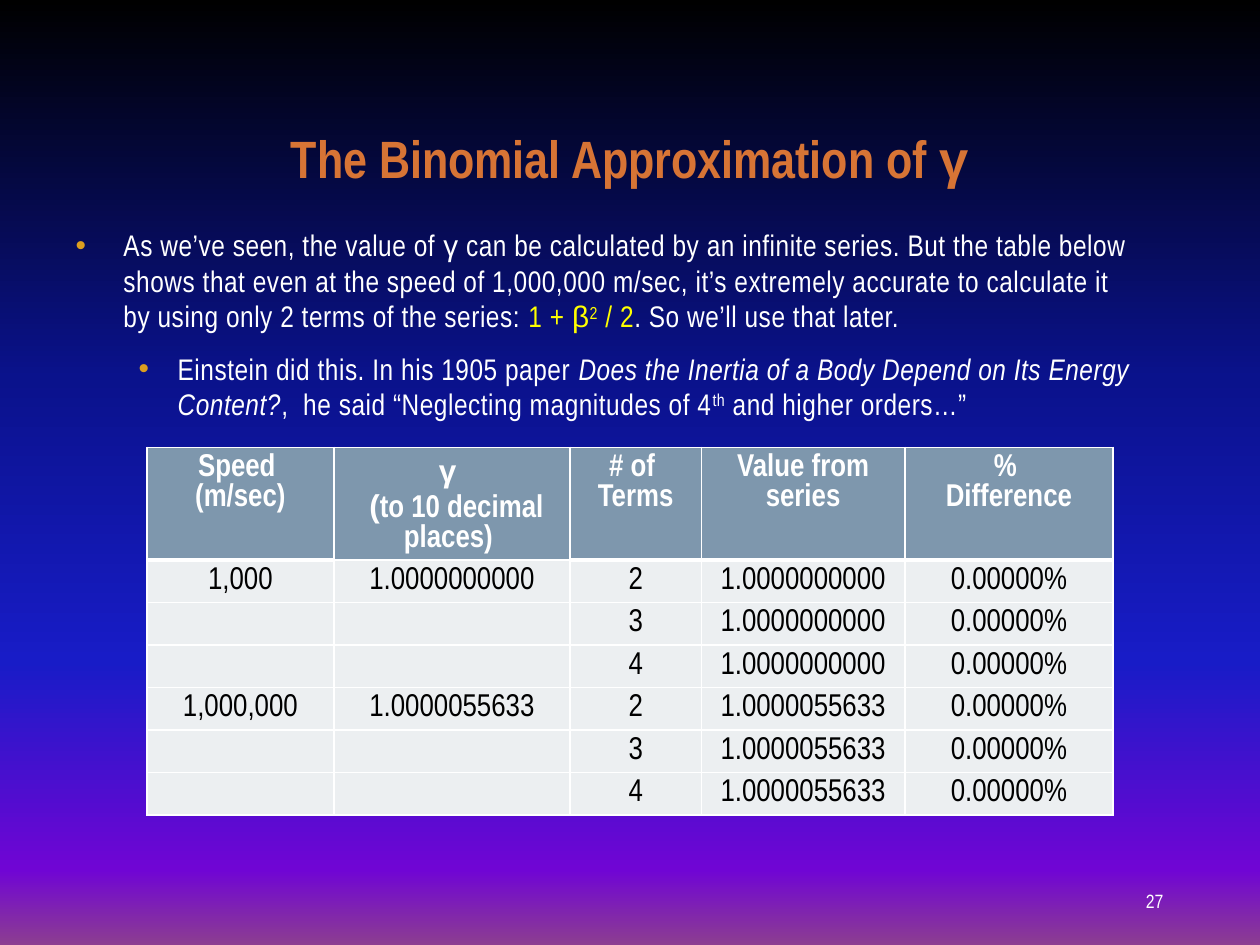
from lxml import etree
from pptx import Presentation
from pptx.dml.color import RGBColor
from pptx.enum.text import MSO_ANCHOR, MSO_AUTO_SIZE, PP_ALIGN
from pptx.oxml.ns import qn
from pptx.util import Inches, Pt

LEFT, CENTER, RIGHT = PP_ALIGN.LEFT, PP_ALIGN.CENTER, PP_ALIGN.RIGHT
TOP, MIDDLE, BOTTOM = MSO_ANCHOR.TOP, MSO_ANCHOR.MIDDLE, MSO_ANCHOR.BOTTOM
NO_FIT = MSO_AUTO_SIZE.NONE

COLORS = {
    "title": "D77435", "text": "FFFFFF", "formula": "FFFF00",
    "bullet": "DC9E1F", "header": "7E97AD", "row": "ECEFF1",
    "cell_text": "000000", "border": "FFFFFF",
}
BACKGROUND = [(0, "000000"), (40, "0A128C"), (70, "181CC7"),
              (92, "7005D4"), (100, "8C3D91")]
NARROW, GREEK = "Arial Narrow", "Arial"

# The slide is a grid of 120 columns by 90 rows
UNIT = Inches(10) // 120
TITLE_BOX = (8, 3.6, 104, 15)
BODY_BOX = (6, 21, 104, 59.4)
TABLE_BOX = (14, 42.6, 92, 35)
NUMBER_BOX = (99, 83.4, 13, 4.8)
COLUMNS = [17.8, 22.5, 12.5, 19.4, 19.8]
HEADER_HEIGHT, ROW_HEIGHT = 10.7, 4.05

TITLE_FORMAT = {"size": Pt(30), "name": NARROW, "bold": True}
BODY_FORMAT = {"size": Pt(17), "name": NARROW, "bold": False}
HEADER_FORMAT = {"size": Pt(18), "name": NARROW, "bold": True}
CELL_FORMAT = {"size": Pt(18), "name": NARROW, "bold": False}
NUMBER_FORMAT = {"size": Pt(11), "name": NARROW}
SYMBOL = {"name": GREEK}

BULLETS = [
    {"indent": (0.38, -0.38), "before": 0, "runs": [
        ("As we’ve seen, the value of ", {}), ("γ", SYMBOL),
        (" can be calculated by an infinite series. But the table below shows "
         "that even at the speed of 1,000,000 m/sec, it’s extremely accurate to "
         "calculate it by using only 2 terms of the series: ", {}),
        ("1 + ", {"color": "formula"}),
        ("β", {"name": GREEK, "color": "formula"}),
        ("2", {"raised": True, "color": "formula"}),
        (" / 2", {"color": "formula"}),
        (". So we’ll use that later.", {})]},
    {"indent": (0.81, -0.31), "before": 3.4, "runs": [
        ("Einstein did this. In his 1905 paper ", {}),
        ("Does the Inertia of a Body Depend on Its Energy Content?",
         {"italic": True}),
        (",  he said “Neglecting magnitudes of 4", {}),
        ("th", {"raised": True}),
        (" and higher orders…”", {})]},
]

# Each header is a list of paragraphs, each paragraph a list of runs
HEADERS = [
    [[("Speed ", {})], [("(m/sec)", {})]],
    [[("γ ", SYMBOL)], [(" (", SYMBOL), ("to 10 decimal places) ", {})]],
    [[("# of ", {})], [("Terms", {})]],
    [[("Value from series", {})]],
    [[("% ", {})], [("Difference", {})]],
]
SPEEDS = [("1,000", "1.0000000000"), ("1,000,000", "1.0000055633")]
TERMS = ["2", "3", "4"]


def place(shape, box):
    for side, cells in zip(("left", "top", "width", "height"), box):
        setattr(shape, side, round(cells * UNIT))


def set_frame(frame, anchor):
    for key, value in {"word_wrap": True, "auto_size": NO_FIT,
                       "vertical_anchor": anchor}.items():
        setattr(frame, key, value)


def add_runs(paragraph, runs, base, color, spacing=None):
    for text, changes in runs:
        run = paragraph.add_run()
        run.text = text
        formats = {**base, **changes}
        run_color = formats.pop("color", color)
        raised = formats.pop("raised", False)
        for key, value in formats.items():
            setattr(run.font, key, value)
        run.font.color.rgb = RGBColor.from_string(COLORS[run_color])
        properties = run.font._element
        if raised:
            properties.set("baseline", "30000")
        if spacing:
            properties.set("spc", str(round(spacing * 100)))


def paint_background(slide):
    fill = slide.background.fill
    fill.gradient()
    fill.gradient_angle = 270
    stops = slide.element.find(".//" + qn("a:gsLst"))
    for stop in list(stops):
        stops.remove(stop)
    for position, color in BACKGROUND:
        stop = etree.SubElement(stops, qn("a:gs"), pos=str(position * 1000))
        etree.SubElement(stop, qn("a:srgbClr"), val=color)


def add_title(slide, box):
    title = slide.shapes.title
    place(title, box)
    set_frame(title.text_frame, BOTTOM)
    paragraph = title.text_frame.paragraphs[0]
    paragraph.alignment = CENTER
    add_runs(paragraph, [("The Binomial Approximation of ", {}), ("γ", SYMBOL)],
             TITLE_FORMAT, "title")


def add_bullet_mark(paragraph, indent):
    properties = paragraph._p.get_or_add_pPr()
    for key, inches in zip(("marL", "indent"), indent):
        properties.set(key, str(Inches(inches)))
    bullet_color = etree.SubElement(properties, qn("a:buClr"))
    etree.SubElement(bullet_color, qn("a:srgbClr"), val=COLORS["bullet"])
    etree.SubElement(properties, qn("a:buFont"), typeface="Arial")
    etree.SubElement(properties, qn("a:buChar"), char="•")


def add_body(slide, box):
    body = slide.placeholders[1]
    place(body, box)
    frame = body.text_frame
    set_frame(frame, TOP)
    for level, bullet in enumerate(BULLETS):
        paragraph = frame.add_paragraph() if level else frame.paragraphs[0]
        add_bullet_mark(paragraph, bullet["indent"])
        for key, value in {"level": level, "alignment": LEFT,
                           "space_before": Pt(bullet["before"]),
                           "space_after": Pt(6)}.items():
            setattr(paragraph, key, value)
        add_runs(paragraph, bullet["runs"], BODY_FORMAT, "text", spacing=0.3)


def set_borders(cell, bottom):
    properties = cell._tc.get_or_add_tcPr()
    for side, width in {"L": 1, "R": 1, "T": 1, "B": bottom}.items():
        line = etree.SubElement(properties, qn("a:ln" + side), w=str(Pt(width)))
        fill = etree.SubElement(line, qn("a:solidFill"))
        etree.SubElement(fill, qn("a:srgbClr"), val=COLORS["border"])


def fill_cell(cell, paragraphs, formats, color, background, bottom=1):
    set_borders(cell, bottom)
    cell.fill.solid()
    cell.fill.fore_color.rgb = RGBColor.from_string(COLORS[background])
    frame = cell.text_frame
    for index, runs in enumerate(paragraphs):
        paragraph = frame.add_paragraph() if index else frame.paragraphs[0]
        paragraph.alignment = CENTER
        add_runs(paragraph, runs, formats, color)
        if not runs:
            # Keeps an empty cell from stretching its row
            etree.SubElement(paragraph._p, qn("a:endParaRPr"), sz="1400")


def add_series_table(slide, box):
    rows = [(speed if term == TERMS[0] else "", gamma if term == TERMS[0] else "",
             term, gamma, "0.00000%")
            for speed, gamma in SPEEDS for term in TERMS]
    left, top, width, height = (round(cells * UNIT) for cells in box)
    table = slide.shapes.add_table(len(rows) + 1, len(COLUMNS),
                                   left, top, width, height).table
    table.first_row = table.horz_banding = False
    for column, cells in zip(table.columns, COLUMNS):
        column.width = round(cells * UNIT)
    for index, row in enumerate(table.rows):
        row.height = round((ROW_HEIGHT if index else HEADER_HEIGHT) * UNIT)
    for c, header in enumerate(HEADERS):
        fill_cell(table.cell(0, c), header, HEADER_FORMAT, "text", "header",
                  bottom=1 if c == 1 else 3)
    for r, values in enumerate(rows, start=1):
        for c, value in enumerate(values):
            runs = [(value, {})] if value else []
            fill_cell(table.cell(r, c), [runs], CELL_FORMAT, "cell_text", "row")


def add_slide_number(slide, box):
    number = slide.shapes.add_textbox(*(round(cells * UNIT) for cells in box))
    set_frame(number.text_frame, MIDDLE)
    paragraph = number.text_frame.paragraphs[0]
    paragraph.alignment = RIGHT
    add_runs(paragraph, [("27", {})], NUMBER_FORMAT, "text")


def main():
    deck = Presentation()
    deck.slide_width, deck.slide_height = 120 * UNIT, 90 * UNIT
    slide = deck.slides.add_slide(deck.slide_layouts[1])
    paint_background(slide)
    add_title(slide, TITLE_BOX)
    add_slide_number(slide, NUMBER_BOX)
    add_body(slide, BODY_BOX)
    add_series_table(slide, TABLE_BOX)
    deck.save("out.pptx")


if __name__ == "__main__":
    main()
